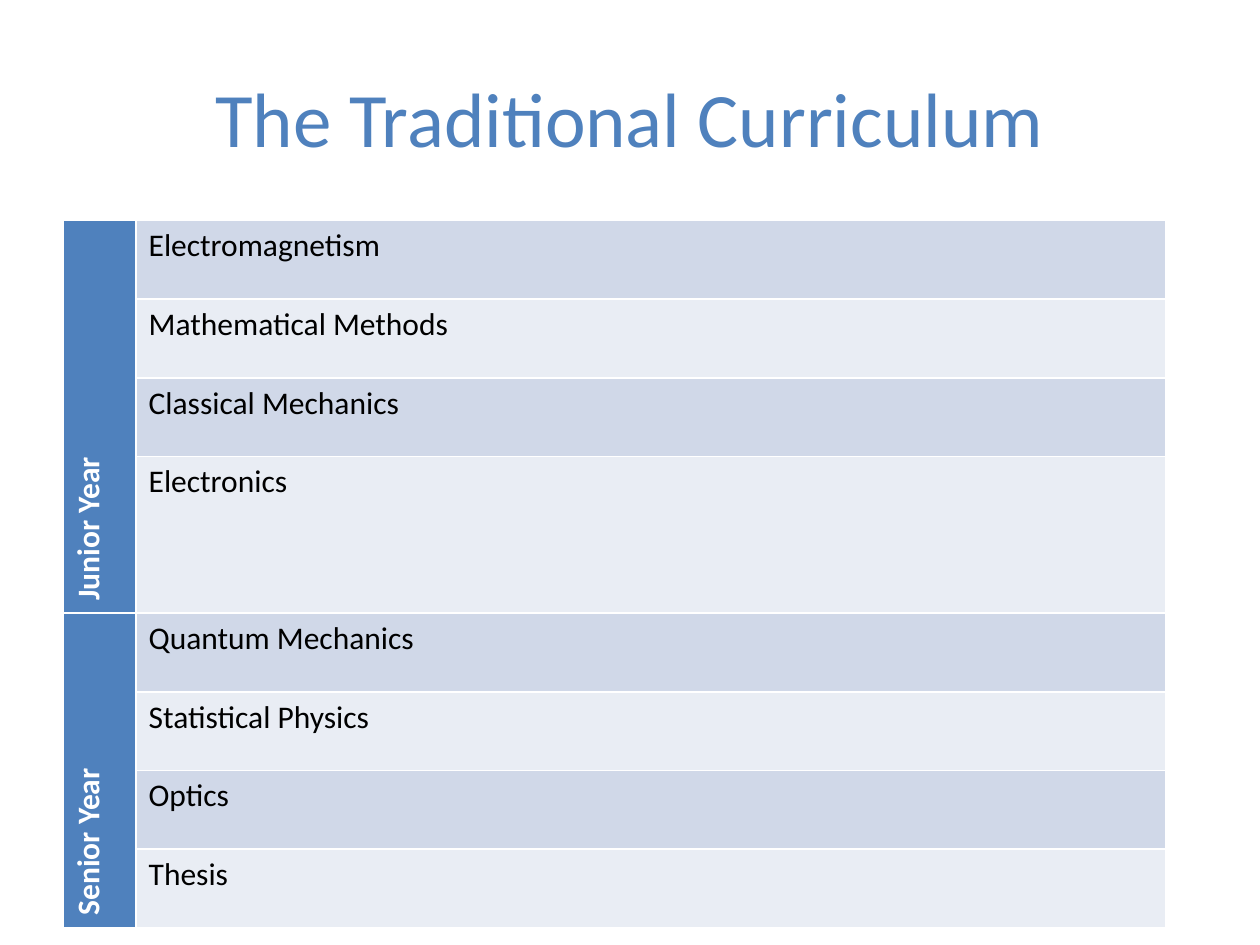
import dataclasses

import lxml.etree
import pptx
import pptx.dml.color
import pptx.enum.text
import pptx.oxml.ns
import pptx.util

SCALE = 9144  # EMU per px, 100 px to the inch
YEARS = {
    "Junior Year": ["Electromagnetism", "Mathematical Methods",
                    "Classical Mechanics", "Electronics"],
    "Senior Year": ["Quantum Mechanics", "Statistical Physics",
                    "Optics", "Thesis"],
}


@dataclasses.dataclass(frozen=True)
class Theme:
    font: str = "Calibri"
    blue: str = "4F81BD"
    white: str = "FFFFFF"
    black: str = "000000"
    bands: tuple = ("D0D8E8", "E9EDF4")
    head: int = 44
    body: int = 18


def px(size):
    return pptx.util.Emu(size * SCALE)


def tint(color):
    return pptx.dml.color.RGBColor.from_string(color)


class Deck:
    def __init__(self, theme):
        self.theme = theme
        self.show = pptx.Presentation()
        self.show.slide_width, self.show.slide_height = px(1000), px(750)
        self.slide = self.show.slides.add_slide(self.show.slide_layouts[6])

    def add_text(self, frame, text, size, color, bold=False):
        run = frame.paragraphs[0].add_run()
        run.text = text
        font = run.font
        font.name, font.size, font.bold = self.theme.font, pptx.util.Pt(size), bold
        font.color.rgb = tint(color)

    def title(self, text, left, top, width, height):
        box = self.slide.shapes.add_textbox(px(left), px(top), px(width), px(height))
        frame = box.text_frame
        frame.word_wrap = True
        frame.vertical_anchor = pptx.enum.text.MSO_ANCHOR.MIDDLE
        frame.paragraphs[0].alignment = pptx.enum.text.PP_ALIGN.CENTER
        self.add_text(frame, text, self.theme.head, self.theme.blue)

    def paint(self, cell, color):
        """Give a cell its fill and thin white borders."""
        props = cell._tc.get_or_add_tcPr()
        for side in ("lnL", "lnR", "lnT", "lnB"):
            line = lxml.etree.SubElement(
                props, pptx.oxml.ns.qn(f"a:{side}"), w=str(pptx.util.Pt(1)))
            fill = lxml.etree.SubElement(line, pptx.oxml.ns.qn("a:solidFill"))
            lxml.etree.SubElement(
                fill, pptx.oxml.ns.qn("a:srgbClr"), val=self.theme.white)
        cell.fill.solid()
        cell.fill.fore_color.rgb = tint(color)

    def plan(self, years, left, top, widths, height):
        """Draw a table with one merged, upright label beside each year's courses."""
        look = self.theme
        count = sum(map(len, years.values()))
        table = self.slide.shapes.add_table(
            count, len(widths), px(left), px(top), px(sum(widths)), px(height)).table
        table.first_row = table.horz_banding = False
        for column, width in zip(table.columns, widths):
            column.width = px(width)
        row = 0
        for year, names in years.items():
            label = table.cell(row, 0)
            label.merge(table.cell(row + len(names) - 1, 0))
            self.add_text(label.text_frame, year, look.body, look.white, True)
            for name in names:
                self.paint(table.cell(row, 0), look.blue)
                cell = table.cell(row, 1)
                self.paint(cell, look.bands[row % 2])
                self.add_text(cell.text_frame, name, look.body, look.black)
                row += 1
            label._tc.get_or_add_tcPr().set("vert", "vert270")


def main():
    deck = Deck(Theme())
    deck.title("The Traditional Curriculum", 50, 30, 900, 125)
    deck.plan(YEARS, 50, 175, (58, 817), 500)
    deck.show.save("out.pptx")


if __name__ == "__main__":
    main()
